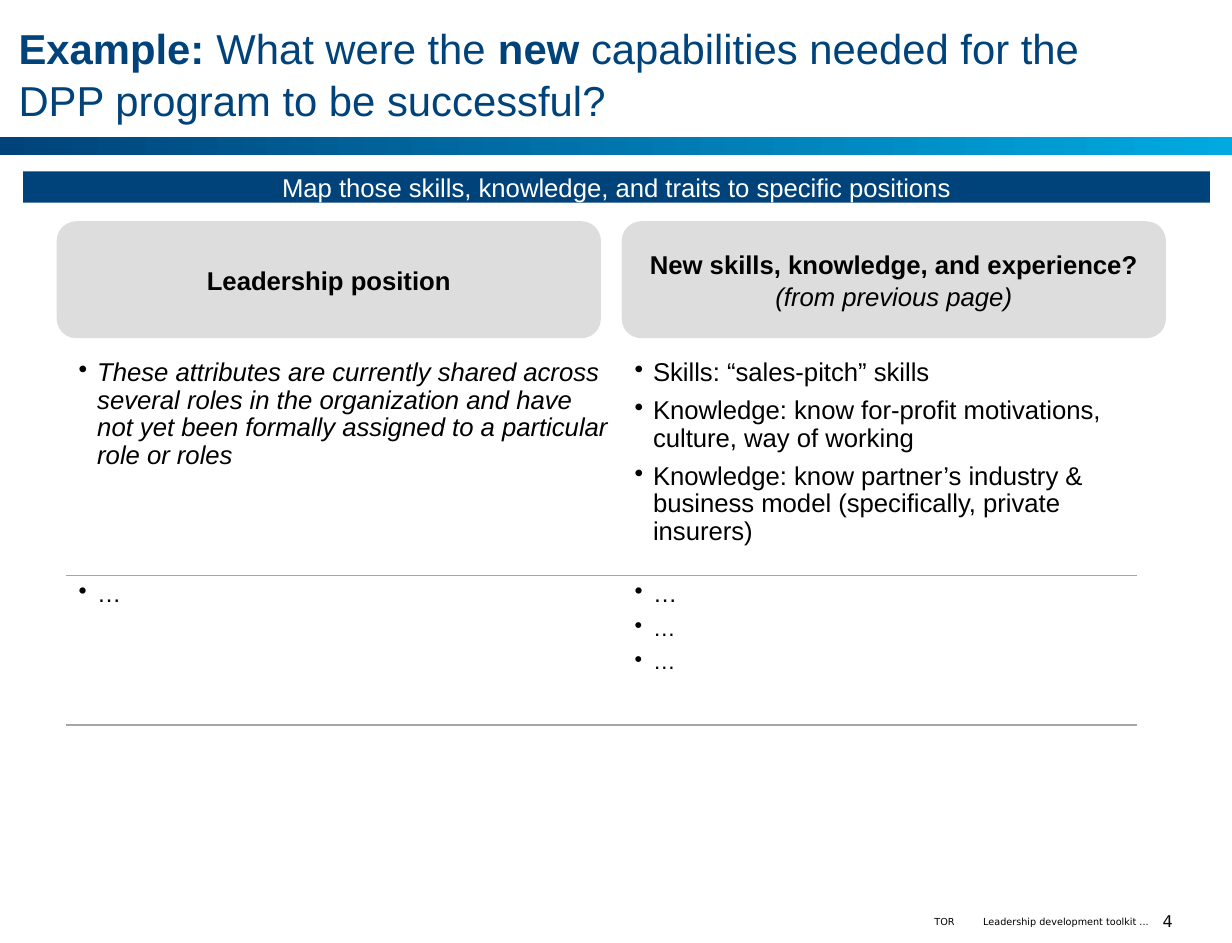
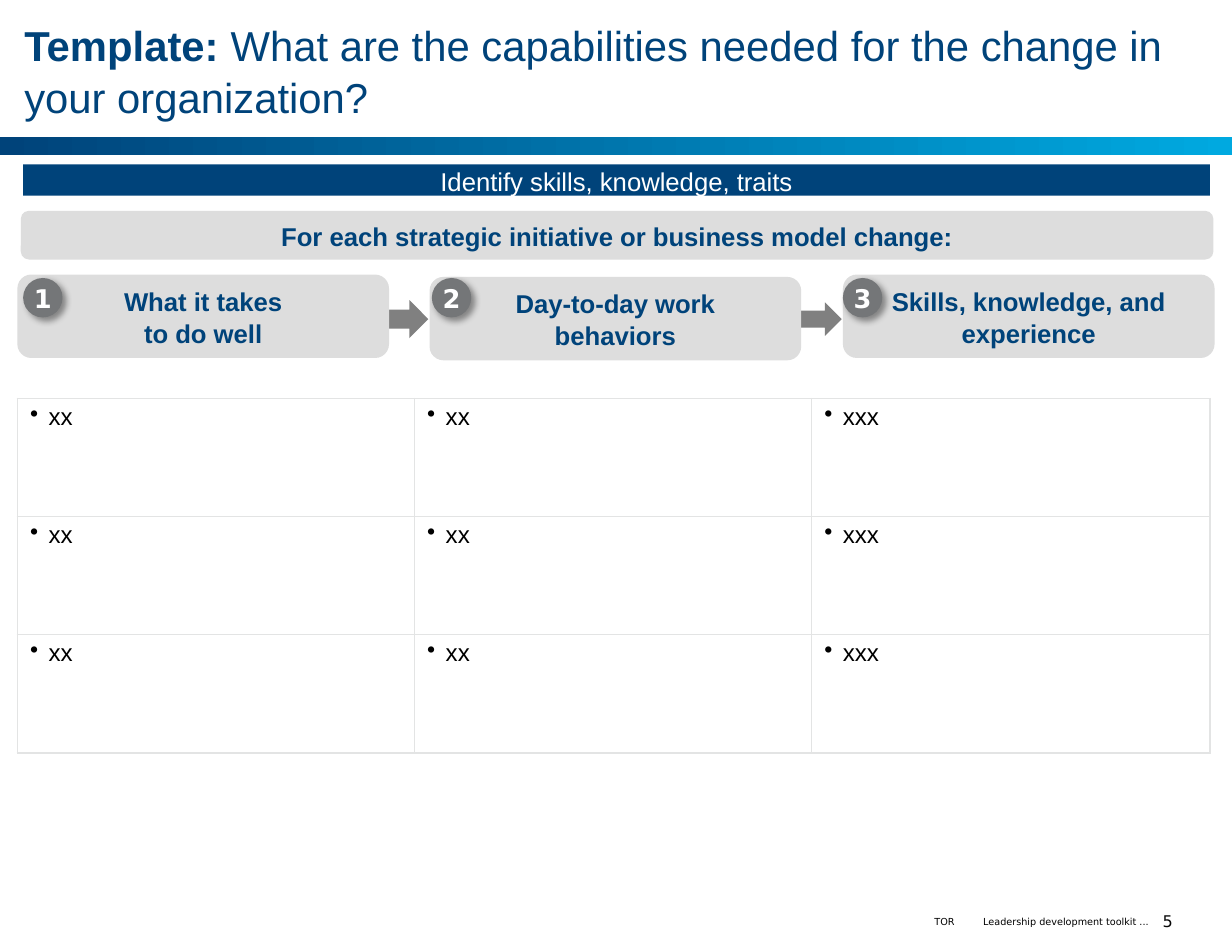
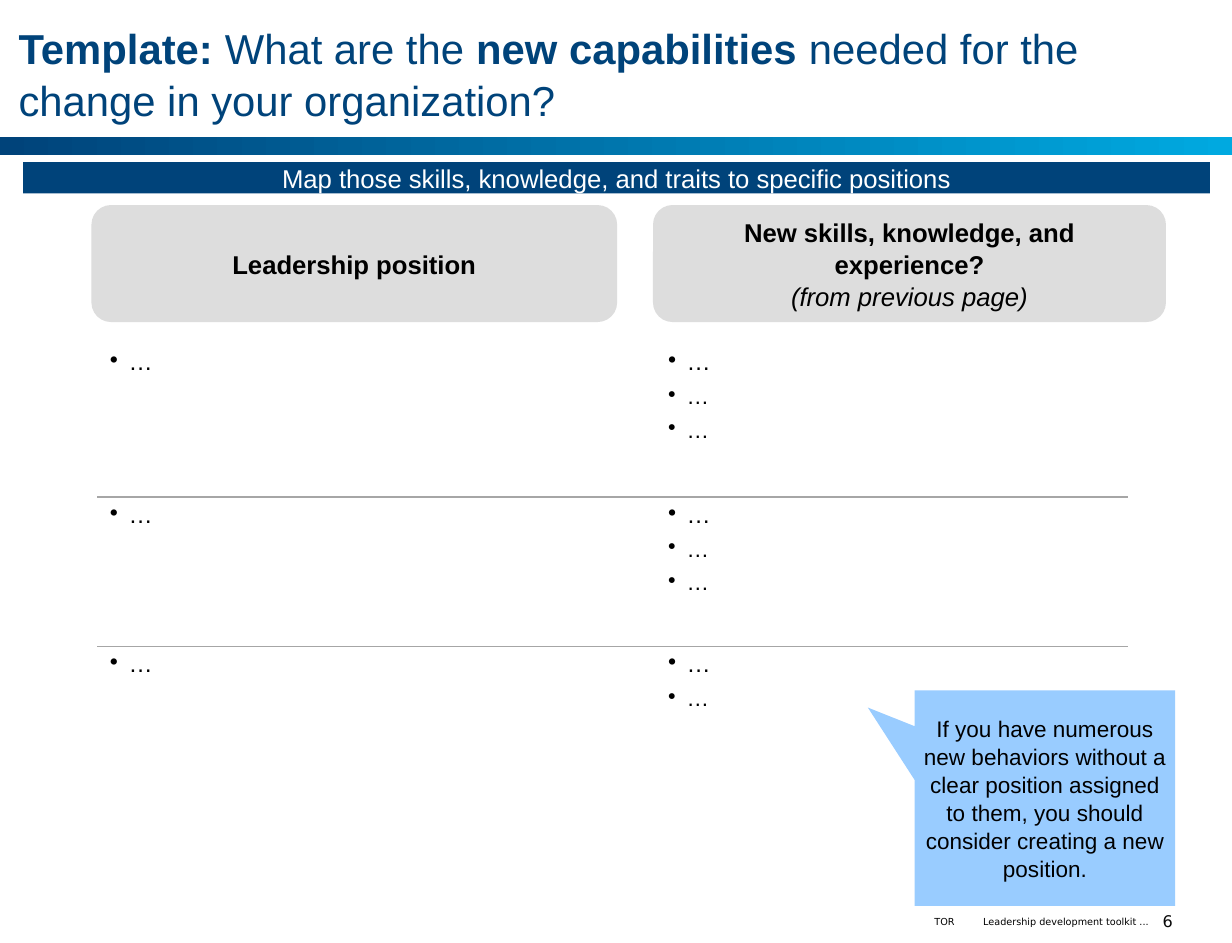
import pptx
import pptx.util
import pptx.dml.color
import pptx.enum.shapes
import pptx.enum.text
import pptx.oxml.ns
from lxml import etree

Inches, Pt = pptx.util.Inches, pptx.util.Pt
SHAPE = pptx.enum.shapes.MSO_SHAPE
ALIGN = pptx.enum.text.PP_ALIGN
ANCHOR = pptx.enum.text.MSO_ANCHOR
qn = pptx.oxml.ns.qn

# Shared look
NAVY, SKY, BLACK, WHITE = "00437A", "00A9E0", "000000", "FFFFFF"
PANEL, ARROW, BADGE, CALLOUT = "DDDDDD", "808080", "747678", "99CCFF"
RULE, GRID, NUMBER = "A6A6A6", "E3E4E4", "080808"
FONT, SMALL_FONT = "Arial", "DejaVu Sans"
SHAPE_SPACING, CELL_SPACING = 1.04, 0.97
PANEL_INSETS = (0.11, 0.05, 0.11, 0.05)
NO_INSETS = (0, 0, 0, 0)
DOTS = "…"


def color(hex_text):
    return pptx.dml.color.RGBColor.from_string(hex_text)


def box(at):
    return [Inches(v) for v in at]


# Text: a paragraph is a string or a list of (text, style) runs; style is "", "b" or "i"
def fill_paragraph(p, content, size, ink=BLACK, font=FONT, bold=False):
    runs = [(content, "b" if bold else "")] if isinstance(content, str) else content
    for text, style in runs:
        r = p.add_run()
        r.text = text
        r.font.name, r.font.size = font, Pt(size)
        r.font.bold, r.font.italic = style == "b", style == "i"
        r.font.color.rgb = color(ink)


def write(tf, paragraphs, size, align=ALIGN.CENTER, insets=PANEL_INSETS, wrap=True, **look):
    tf.word_wrap = wrap
    tf.auto_size = pptx.enum.text.MSO_AUTO_SIZE.NONE
    tf.vertical_anchor = ANCHOR.MIDDLE
    tf.margin_left, tf.margin_top, tf.margin_right, tf.margin_bottom = box(insets)
    for i, content in enumerate(paragraphs):
        p = tf.add_paragraph() if i else tf.paragraphs[0]
        p.alignment, p.line_spacing = align, SHAPE_SPACING
        p.space_before = Pt(0)
        fill_paragraph(p, content, size, **look)


# Shapes
def add_block(s, kind, at, fill):
    sp = s.shapes.add_shape(kind, *box(at))
    sp.shadow.inherit = False
    sp.line.fill.background()
    if fill:
        sp.fill.solid()
        sp.fill.fore_color.rgb = color(fill)
    return sp


def add_panel(s, at, paragraphs, ink=BLACK):
    sp = add_block(s, SHAPE.ROUNDED_RECTANGLE, at, PANEL)
    write(sp.text_frame, paragraphs, 16, ink=ink, bold=True)


def add_label(s, at, text, size, align, ink=BLACK, insets=NO_INSETS):
    tf = s.shapes.add_textbox(*box(at)).text_frame
    write(tf, [text], size, align, insets, ink=ink, font=SMALL_FONT)


def add_banner(s, top, text):
    sp = add_block(s, SHAPE.RECTANGLE, (0.2, top, 10.25, 0.27), NAVY)
    write(sp.text_frame, [text], 16, insets=(0.11, 0, 0.11, 0), ink=WHITE)


def add_badge(s, left, number):
    sp = add_block(s, SHAPE.OVAL, (left, 2.4, 0.34, 0.34), BADGE)
    write(sp.text_frame, [str(number)], 16, insets=NO_INSETS, wrap=False,
          ink=WHITE, font=SMALL_FONT, bold=True)
    effects = sp.element.spPr.find(qn("a:effectLst"))
    shadow = etree.SubElement(effects, qn("a:outerShdw"), blurRad=str(Pt(4)),
                              dist=str(Pt(3)), dir=str(45 * 60000))
    ink = etree.SubElement(shadow, qn("a:srgbClr"), val=BLACK)
    etree.SubElement(ink, qn("a:alpha"), val="40000")


# Tables
def set_borders(cell, sides, ink):
    tcPr = cell._tc.get_or_add_tcPr()
    for i, side in enumerate("LRTB"):
        ln = etree.Element(qn("a:ln" + side), w=str(Pt(1)))
        if side in sides:
            solid = etree.SubElement(ln, qn("a:solidFill"))
            etree.SubElement(solid, qn("a:srgbClr"), val=ink)
        else:
            etree.SubElement(ln, qn("a:noFill"))
        tcPr.insert(i, ln)


def add_bullet(p):
    pPr = p._p.get_or_add_pPr()
    pPr.set("marL", str(Inches(0.16)))
    pPr.set("indent", str(-Inches(0.16)))
    ink = etree.SubElement(pPr, qn("a:buClr"))
    etree.SubElement(ink, qn("a:srgbClr"), val=BLACK)
    etree.SubElement(pPr, qn("a:buChar"), char="•")


def fill_cell(cell, lines, sizes):
    cell.fill.background()
    cell.margin_left, cell.margin_top, cell.margin_right, cell.margin_bottom = box(PANEL_INSETS)
    tf = cell.text_frame
    for i, content in enumerate(lines):
        size = sizes[min(i, 1)]
        p = tf.add_paragraph() if i else tf.paragraphs[0]
        add_bullet(p)
        p.line_spacing = CELL_SPACING
        p.space_before = Pt(0.4 * size if i else 0)
        fill_paragraph(p, content, size)


def add_bullet_table(s, left, top, widths, heights, rows, borders, ink, lead_sizes=(15, 14)):
    """borders holds the ruled sides of each row; lead_sizes applies to the first row."""
    frame = s.shapes.add_table(len(heights), len(widths),
                               *box((left, top, sum(widths), sum(heights))))
    table = frame.table
    table.first_row = table.horz_banding = False
    for column, width in zip(table.columns, widths):
        column.width = Inches(width)
    for i, (row, height) in enumerate(zip(table.rows, heights)):
        row.height = Inches(height)
        for cell, lines in zip(row.cells, rows[i]):
            fill_cell(cell, lines, (15, 14) if i else lead_sizes)
            set_borders(cell, borders[i], ink)


# Slide frame: title, gradient band, footer
def add_slide(prs, number, title, title_at=(0.16, -0.05, 10.01, 1.36)):
    s = prs.slides.add_slide(prs.slide_layouts[5])
    sp = s.shapes.title
    sp.left, sp.top, sp.width, sp.height = box(title_at)
    write(sp.text_frame, [title], 26, ALIGN.LEFT, (0, 0, 0.08, 0), ink=NAVY)

    band = add_block(s, SHAPE.RECTANGLE, (0, 1.18, 10.64, 0.16), None)
    band.fill.gradient()
    band.fill.gradient_angle = 0
    for stop, position, ink in zip(band.fill.gradient_stops, (0, 1), (NAVY, SKY)):
        stop.position, stop.color.rgb = position, color(ink)

    add_label(s, (8.02, 7.9, 0.28, 0.1), "TOR", 6, ALIGN.LEFT, insets=(0.05, 0, 0, 0))
    add_label(s, (8.3, 7.9, 1.62, 0.1), "Leadership development toolkit ...", 6, ALIGN.RIGHT)
    add_label(s, (9.91, 7.9, 0.35, 0.1), str(number), 10, ALIGN.CENTER, NUMBER)
    return s


def add_mapping_head(s, banner_top, panel_top, position_span, skills_span):
    add_banner(s, banner_top, "Map those skills, knowledge, and traits to specific positions")
    heads = [["Leadership position"],
             ["New skills, knowledge, and experience?", [("(from previous page)", "i")]]]
    for (left, width), head in zip((position_span, skills_span), heads):
        add_panel(s, (left, panel_top, width, 1.01), head)


# Slides
def build_example(prs, number):
    s = add_slide(prs, number, [
        ("Example: ", "b"), ("What were the ", ""), ("new", "b"),
        (" capabilities needed for the DPP program to be successful?", "")])
    add_mapping_head(s, 1.48, 1.91, (0.49, 4.7), (5.37, 4.7))
    shared = ("These attributes are currently shared across several roles in the "
              "organization and have not yet been formally assigned to a particular "
              "role or roles")
    skills = [
        "Skills: “sales-pitch” skills",
        "Knowledge: know for-profit motivations, culture, way of working",
        "Knowledge: know partner’s industry & business model (specifically, private insurers)"]
    add_bullet_table(s, 0.57, 3.05, (4.8, 4.45), (1.92, 1.29),
                     [([[(shared, "i")]], skills), ([DOTS], [DOTS] * 3)],
                     ("B", "TB"), RULE, lead_sizes=(16, 16))


def build_capabilities(prs, number):
    s = add_slide(prs, number, [
        ("Template: ", "b"),
        ("What are the capabilities needed for the change in your organization?", "")],
        (0.21, 0.23, 10.01, 0.74))
    add_banner(s, 1.42, "Identify skills, knowledge, traits")
    add_panel(s, (0.18, 1.82, 10.3, 0.42),
              ["For each strategic initiative or business model change:"], NAVY)
    for at in ((2.63, 2.59, 1.07, 0.33), (6.2, 2.61, 1.07, 0.29)):
        add_block(s, SHAPE.RIGHT_ARROW, at, ARROW)
    steps = [(0.15, 2.37, 0.2, ["What it takes", "to do well"]),
             (3.71, 2.39, 3.73, ["Day-to-day work", "behaviors"]),
             (7.28, 2.37, 7.28, ["Skills, knowledge, and", "experience"])]
    for step, (left, top, badge_left, lines) in enumerate(steps, 1):
        add_panel(s, (left, top, 3.21, 0.72), lines, NAVY)
        add_badge(s, badge_left, step)
    add_bullet_table(s, 0.15, 3.44, (3.43, 3.43, 3.44), (1.02,) * 3,
                     [(["xx"], ["xx"], ["xxx"])] * 3, ("LRTB",) * 3, GRID)


def build_positions(prs, number):
    s = add_slide(prs, number, [
        ("Template: ", "b"), ("What are the ", ""), ("new capabilities", "b"),
        (" needed for the change in your organization?", "")])
    add_mapping_head(s, 1.4, 1.77, (0.79, 4.54), (5.64, 4.43))
    add_bullet_table(s, 0.84, 2.97, (4.82, 4.08), (1.32, 1.29, 1.27),
                     [([DOTS], [DOTS] * count) for count in (3, 3, 2)],
                     ("B", "TB", "T"), RULE)
    note = add_block(s, SHAPE.RECTANGULAR_CALLOUT, (7.9, 5.96, 2.25, 1.86), CALLOUT)
    note.adjustments[0], note.adjustments[1] = -0.68, -0.42
    write(note.text_frame,
          ["If you have numerous new behaviors without a clear position assigned "
           "to them, you should consider creating a new position."],
          14, insets=(0.05,) * 4)


def main():
    prs = pptx.Presentation()
    prs.slide_width, prs.slide_height = Inches(10.64), Inches(8.14)
    builders = (build_example, build_capabilities, build_positions)
    for number, build in enumerate(builders, 4):
        build(prs, number)
    prs.save("out.pptx")


if __name__ == "__main__":
    main()
